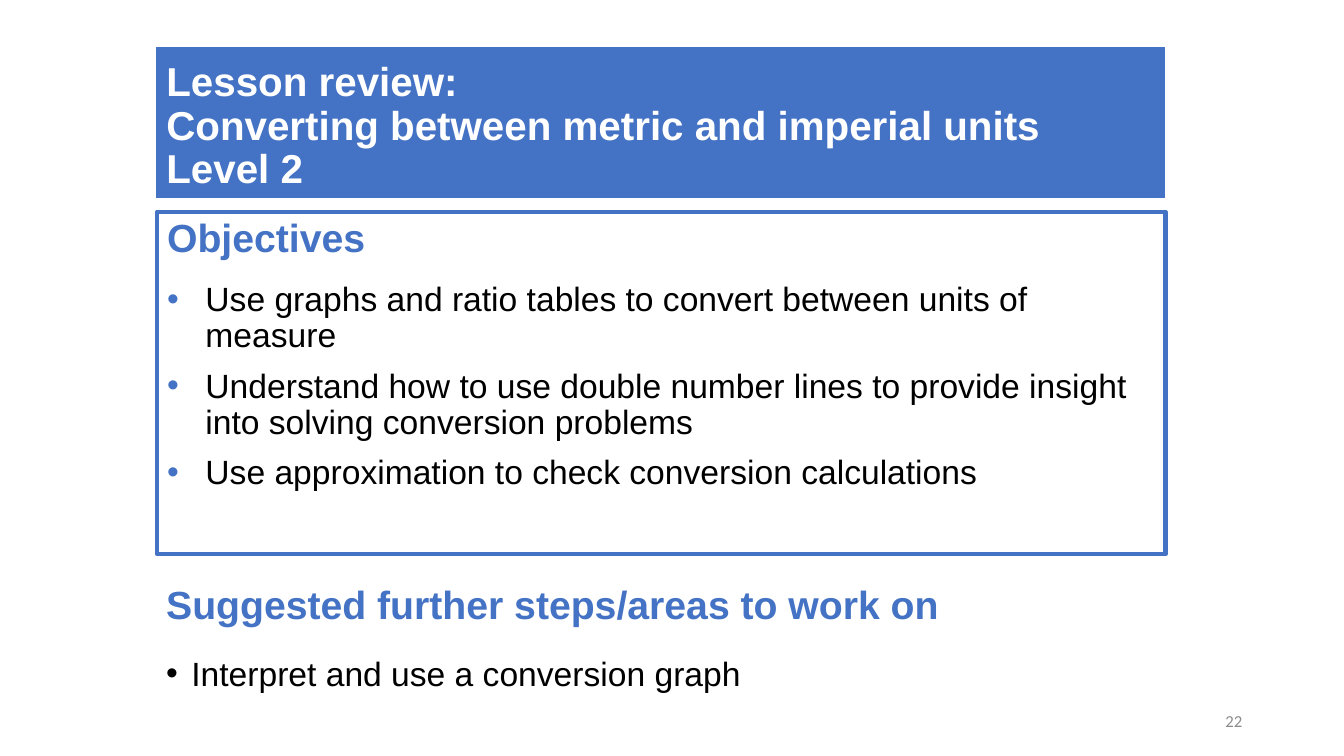
import pptx
import pptx.util
import pptx.dml.color
import pptx.enum.shapes
import pptx.enum.text
import pptx.oxml.ns
from lxml import etree

Inches, Pt = pptx.util.Inches, pptx.util.Pt
RGBColor = pptx.dml.color.RGBColor
PP_ALIGN = pptx.enum.text.PP_ALIGN
MSO_ANCHOR = pptx.enum.text.MSO_ANCHOR
qn = pptx.oxml.ns.qn

BLUE = RGBColor(0x44, 0x72, 0xC4)
BLACK = RGBColor(0, 0, 0)
WHITE = RGBColor(0xFF, 0xFF, 0xFF)
GREY = RGBColor(0x8C, 0x8C, 0x8C)

LEFT, WIDTH = Inches(1.55), Inches(10)
LINE_PITCH = Pt(31)


def format_paragraph(paragraph, size, color, bold=False, line_spacing=0.9,
                     before=0, after=0, font="Arial"):
    paragraph.alignment = PP_ALIGN.LEFT
    paragraph.line_spacing = line_spacing
    paragraph.space_before, paragraph.space_after = Pt(before), Pt(after)
    paragraph.font.name, paragraph.font.size = font, Pt(size)
    paragraph.font.bold = bold
    paragraph.font.color.rgb = color


def add_section(frame, heading, points, indent, bullet_color, line_spacing):
    """Fill a text frame with a blue heading and its bulleted points."""
    frame.word_wrap = True
    frame.vertical_anchor = MSO_ANCHOR.TOP
    title_line = frame.paragraphs[0]
    title_line.text = heading
    format_paragraph(title_line, 28, BLUE, True, LINE_PITCH, 10, 6)
    for point in points:
        item = frame.add_paragraph()
        item.text = point
        format_paragraph(item, 24, BLACK, False, line_spacing, 10,
                         6 if point == points[-1] else 0)
        properties = item._p.get_or_add_pPr()
        properties.set("marL", str(Inches(indent)))
        properties.set("indent", str(-Inches(indent)))
        color = etree.Element(qn("a:buClr"))
        etree.SubElement(color, qn("a:srgbClr"), val=str(bullet_color))
        font = etree.Element(qn("a:buFont"), typeface="Arial")
        mark = etree.Element(qn("a:buChar"), char="•")
        # Bullet settings come after spacing and before the default run format
        for element in (color, font, mark):
            properties.find(qn("a:defRPr")).addprevious(element)


deck = pptx.Presentation()
deck.slide_width, deck.slide_height = Inches(13.33), Inches(7.5)
slide = deck.slides.add_slide(deck.slide_layouts[5])

# Title banner
banner = slide.shapes.title
banner.left, banner.top = LEFT, Inches(0.47)
banner.width, banner.height = WIDTH, Inches(1.49)
banner.fill.solid()
banner.fill.fore_color.rgb = BLUE
banner.line.color.rgb = BLUE
banner.line.width = Pt(0.75)
banner.text_frame.auto_size = pptx.enum.text.MSO_AUTO_SIZE.NONE
banner.text_frame.vertical_anchor = MSO_ANCHOR.BOTTOM
lesson = banner.text_frame.paragraphs[0]
lesson.text = ("Lesson review: \v"
               "Converting between metric and imperial units\v"
               "Level 2")
format_paragraph(lesson, 28.8, WHITE, True)

# Slide number
number_box = slide.shapes.add_textbox(Inches(9.42), Inches(6.95), Inches(3), Inches(0.4))
number_box.text_frame.word_wrap = True
number_box.text_frame.vertical_anchor = MSO_ANCHOR.MIDDLE
number = number_box.text_frame.paragraphs[0]
number.text = "22"
format_paragraph(number, 12, GREY, line_spacing=1.0, font="Calibri")
number.alignment = PP_ALIGN.RIGHT

# Objectives in an outlined box
objectives = slide.shapes.add_shape(pptx.enum.shapes.MSO_SHAPE.RECTANGLE,
                                    Inches(1.56), Inches(2.1), WIDTH, Inches(3.4))
objectives.shadow.inherit = False
objectives.fill.background()
objectives.line.color.rgb = BLUE
objectives.line.width = Pt(3)
add_section(objectives.text_frame, "Objectives", [
    "Use graphs and ratio tables to convert between units of measure",
    "Understand how to use double number lines to provide insight into solving "
    "conversion problems",
    "Use approximation to check conversion calculations",
], 0.38, BLUE, 0.9)

# Further steps
further_steps = slide.shapes.add_textbox(LEFT, Inches(5.74), Inches(10.45), Inches(1.18))
add_section(further_steps.text_frame, "Suggested further steps/areas to work on",
            ["Interpret and use a conversion graph"], 0.25, BLACK, LINE_PITCH)

deck.save("out.pptx")
